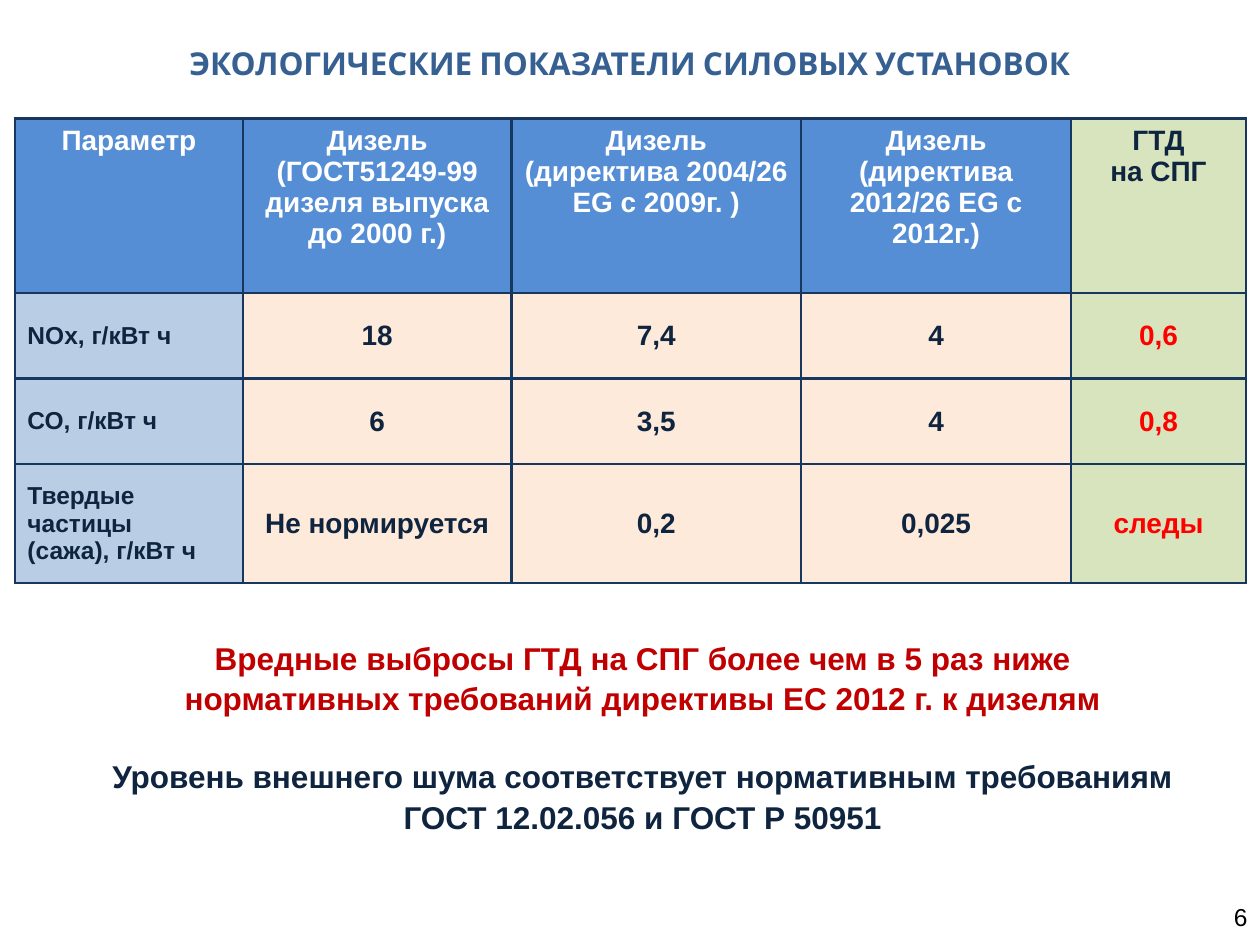
"""Builds the slide comparing emissions of diesel and gas turbine power units."""
from lxml import etree
from pptx import Presentation, util as u
from pptx.dml.color import RGBColor
from pptx.enum import text
from pptx.oxml.ns import qn

COLORS = {
    "title": "376092", "header": "558ED5", "label": "B9CDE5", "value": "FDEADA",
    "turbine": "D7E4BD", "border": "17375E", "dark": "0F243E", "white": "FFFFFF",
    "red": "FF0000", "claim": "C00000", "black": "000000",
}
ALIGN = text.PP_ALIGN
ANCHOR = text.MSO_ANCHOR
COLUMN_WIDTHS = [4.6, 5.41, 5.84, 5.44, 3.53]
ROW_HEIGHTS = [3.51, 1.73, 1.73, 2.39]
ROWS = [
    ["Параметр", "Дизель\n(ГОСТ51249-99\nдизеля выпуска до 2000 г.)",
     "Дизель\n(директива 2004/26 ЕG с 2009г. )",
     "Дизель\n(директива 2012/26 ЕG с 2012г.)", "ГТД\nна СПГ"],
    ["NОх, г/кВт ч", "18", "7,4", "4", "0,6"],
    ["СО, г/кВт ч", "6", "3,5", "4", "0,8"],
    ["Твердые частицы\n(сажа), г/кВт ч", "Не нормируется", "0,2", "0,025", "следы"],
]
CONCLUSIONS = [
    ("Вредные выбросы ГТД на СПГ более чем в 5 раз ниже\v"
     "нормативных требований директивы ЕС 2012 г. к дизелям", "claim"),
    ("Уровень внешнего шума соответствует нормативным требованиям\v"
     "ГОСТ 12.02.056 и ГОСТ Р 50951", "dark"),
]


def write_paragraph(paragraph, content, *, size, color, bold=True, font="Arial",
                    align=ALIGN.CENTER):
    """Fill a paragraph with formatted text."""
    paragraph.text = content
    paragraph.alignment = align
    for run in paragraph.runs:
        run.font.size = u.Pt(size)
        run.font.bold = bold
        run.font.name = font
        run.font.color.rgb = RGBColor.from_string(COLORS[color])


def place(shape, box):
    """Move a shape to a box of left, top, width and height in centimetres."""
    shape.left, shape.top, shape.width, shape.height = map(u.Cm, box)


def add_text_frame(slide, box, anchor):
    """Add a wrapping text box and return its text frame."""
    frame = slide.shapes.add_textbox(*map(u.Cm, box)).text_frame
    frame.word_wrap = True
    frame.vertical_anchor = anchor
    return frame


def set_borders(cell, color, width):
    """Draw a solid line on all four sides of a cell."""
    properties = cell._tc.get_or_add_tcPr()
    for index, side in enumerate(("a:lnL", "a:lnR", "a:lnT", "a:lnB")):
        line = etree.Element(qn(side), w=str(u.Pt(width)))
        fill = etree.SubElement(line, qn("a:solidFill"))
        etree.SubElement(fill, qn("a:srgbClr"), val=COLORS[color])
        properties.insert(index, line)


def cell_style(row, column):
    """Return the fill, text colour, size and alignment for a table position."""
    if column == len(COLUMN_WIDTHS) - 1:
        return "turbine", "red" if row else "dark", 16, ALIGN.CENTER
    if row == 0:
        return "header", "white", 16, ALIGN.CENTER
    if column == 0:
        return "label", "dark", 14, ALIGN.LEFT
    return "value", "dark", 16, ALIGN.CENTER


def add_title(slide, box):
    """Place and format the title placeholder."""
    title = slide.shapes.title
    place(title, box)
    title.text_frame.vertical_anchor = ANCHOR.MIDDLE
    write_paragraph(title.text_frame.paragraphs[0],
                    "ЭКОЛОГИЧЕСКИЕ ПОКАЗАТЕЛИ СИЛОВЫХ УСТАНОВОК",
                    size=18, color="title", font="Cabin")


def add_emissions_table(slide, left, top):
    """Add the table of emission limits by engine type."""
    box = (left, top, sum(COLUMN_WIDTHS), sum(ROW_HEIGHTS))
    table = slide.shapes.add_table(len(ROWS), len(COLUMN_WIDTHS), *map(u.Cm, box)).table
    for column, width in zip(table.columns, COLUMN_WIDTHS):
        column.width = u.Cm(width)
    for row, height in zip(table.rows, ROW_HEIGHTS):
        row.height = u.Cm(height)
    for row, values in enumerate(ROWS):
        for column, value in enumerate(values):
            cell = table.cell(row, column)
            fill, color, size, align = cell_style(row, column)
            cell.fill.solid()
            cell.fill.fore_color.rgb = RGBColor.from_string(COLORS[fill])
            cell.vertical_anchor = ANCHOR.MIDDLE if row else ANCHOR.TOP
            set_borders(cell, "border", 1.5)
            cell.text = value
            for paragraph in cell.text_frame.paragraphs:
                write_paragraph(paragraph, paragraph.text, size=size, color=color,
                                align=align)


def add_conclusions(slide, box):
    """Add the two centred conclusions under the table."""
    frame = add_text_frame(slide, box, ANCHOR.MIDDLE)
    frame.margin_left = u.Cm(0.76)
    for index, (content, color) in enumerate(CONCLUSIONS):
        paragraph = frame.add_paragraph() if index else frame.paragraphs[0]
        write_paragraph(paragraph, content, size=18, color=color)
        paragraph.line_spacing = 1.07
        if index:
            paragraph.space_before = u.Pt(21.5)


def add_page_number(slide, box):
    """Add the page number in the lower right corner."""
    frame = add_text_frame(slide, box, ANCHOR.TOP)
    write_paragraph(frame.paragraphs[0], "6", size=14, color="black", bold=False,
                    align=ALIGN.RIGHT)


def main():
    """Build and save the presentation."""
    presentation = Presentation()
    presentation.slide_width, presentation.slide_height = u.Cm(25.4), u.Cm(19.05)
    slide = presentation.slides.add_slide(presentation.slide_layouts[5])
    add_title(slide, (0, 0.76, 25.4, 1.02))
    add_emissions_table(slide, 0.3, 2.39)
    add_conclusions(slide, (0, 12.78, 25.4, 4.11))
    add_page_number(slide, (23.7, 18.06, 1.7, 0.99))
    presentation.save("out.pptx")


if __name__ == "__main__":
    main()
